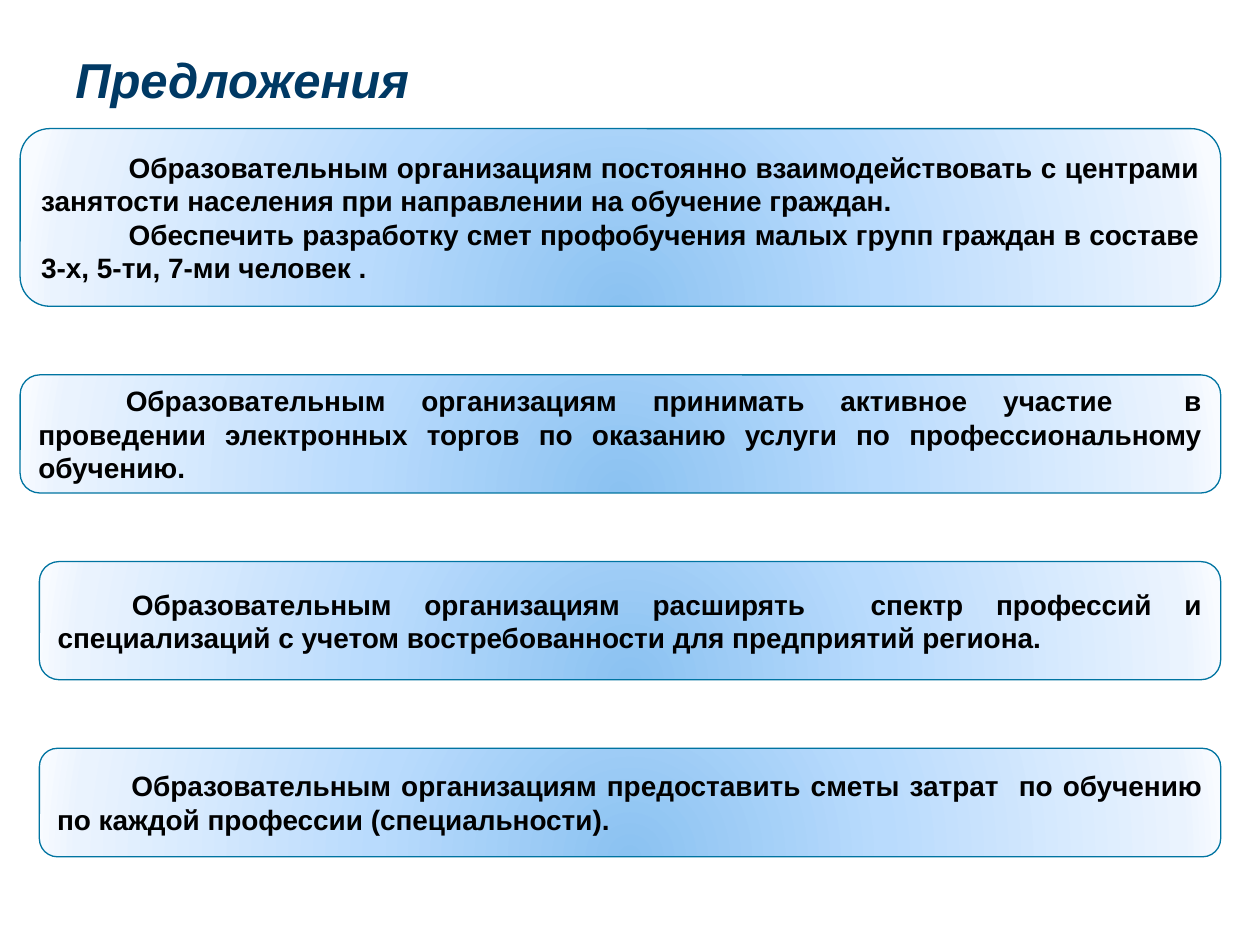
from pptx import Presentation
from pptx.dml.color import RGBColor
from pptx.enum.shapes import MSO_AUTO_SHAPE_TYPE as Shape
from pptx.enum.text import MSO_ANCHOR as Anchor, PP_ALIGN as Align
from pptx.oxml import parse_xml
from pptx.oxml.ns import nsdecls, qn
from pptx.util import Pt

COLOURS = {"heading": "003964", "body": "000000", "border": "0074A1"}
GLOW = {0: "8BC2F1", 43: "B9DBFD", 93: "EAF3FE", 100: "F8FBFF"}
HEADING = {"name": "Arial", "size": Pt(28), "bold": True, "italic": True}
BODY = {"name": "Arial", "size": Pt(16), "bold": True}
RIGHT_EDGE, FIRST_TOP, GAP = 697.5, 73.5, 39.2

PROPOSALS = [
    (11.5, 101.5, 50, [
        "Образовательным организациям постоянно взаимодействовать с центрами "
        "занятости населения при направлении на обучение граждан.",
        "Обеспечить разработку смет профобучения малых групп граждан в составе "
        "3-х, 5-ти, 7-ми человек .",
    ]),
    (11.5, 67.5, 50, [
        "Образовательным организациям принимать активное участие  в проведении "
        "электронных торгов по оказанию услуги по профессиональному обучению.",
    ]),
    (22.5, 67.5, 42.5, [
        "Образовательным организациям расширять  спектр профессий и "
        "специализаций с учетом востребованности для предприятий региона.",
    ]),
    (22.5, 62, 42.5, [
        "Образовательным организациям предоставить сметы затрат  по обучению "
        "по каждой профессии (специальности).",
    ]),
]


class ProposalSlide:
    """Draws the heading and the proposal panels on one slide."""

    def __init__(self, slide):
        self.slide = slide

    def format(self, paragraph, values, colour):
        for attribute, value in values.items():
            setattr(paragraph.font, attribute, value)
        paragraph.font.color.rgb = RGBColor.from_string(COLOURS[colour])

    def heading(self, wording, left, top, width, height):
        heading = self.slide.shapes.add_textbox(Pt(left), Pt(top), Pt(width), Pt(height))
        frame = heading.text_frame
        frame.word_wrap = True
        frame.margin_top = Pt(7)
        frame.text = wording
        self.format(frame.paragraphs[0], HEADING, "heading")

    def glow(self, panel):
        stops = "".join(
            f'<a:gs pos="{position * 1000}"><a:srgbClr val="{colour}"/></a:gs>'
            for position, colour in GLOW.items()
        )
        panel.fill.gradient()
        properties = panel.fill._xPr
        properties.replace(properties.find(qn("a:gradFill")), parse_xml(
            f'<a:gradFill {nsdecls("a")} rotWithShape="1"><a:gsLst>{stops}</a:gsLst>'
            '<a:path path="circle"><a:fillToRect l="50000" t="130000" r="50000" b="-30000"/>'
            '</a:path></a:gradFill>'
        ))

    def panel(self, left, top, height, indent, proposals):
        panel = self.slide.shapes.add_shape(
            Shape.ROUNDED_RECTANGLE, Pt(left), Pt(top), Pt(RIGHT_EDGE - left), Pt(height))
        panel.shadow.inherit = False
        self.glow(panel)
        panel.line.color.rgb = RGBColor.from_string(COLOURS["border"])
        panel.line.width = Pt(0.75)
        frame = panel.text_frame
        frame.word_wrap = True
        frame.vertical_anchor = Anchor.MIDDLE
        frame.text = "\n".join(proposals)
        for paragraph in frame.paragraphs:
            paragraph.alignment = Align.JUSTIFY
            paragraph._p.get_or_add_pPr().set("indent", str(Pt(indent)))
            self.format(paragraph, BODY, "body")


def main():
    deck = Presentation()
    deck.slide_width, deck.slide_height = Pt(720), Pt(540)
    page = ProposalSlide(deck.slides.add_slide(deck.slide_layouts[6]))
    page.heading("Предложения", 36, 21.5, 648, 67)
    top = FIRST_TOP
    for left, height, indent, proposals in PROPOSALS:
        page.panel(left, top, height, indent, proposals)
        top += height + GAP
    deck.save("out.pptx")


if __name__ == "__main__":
    main()
